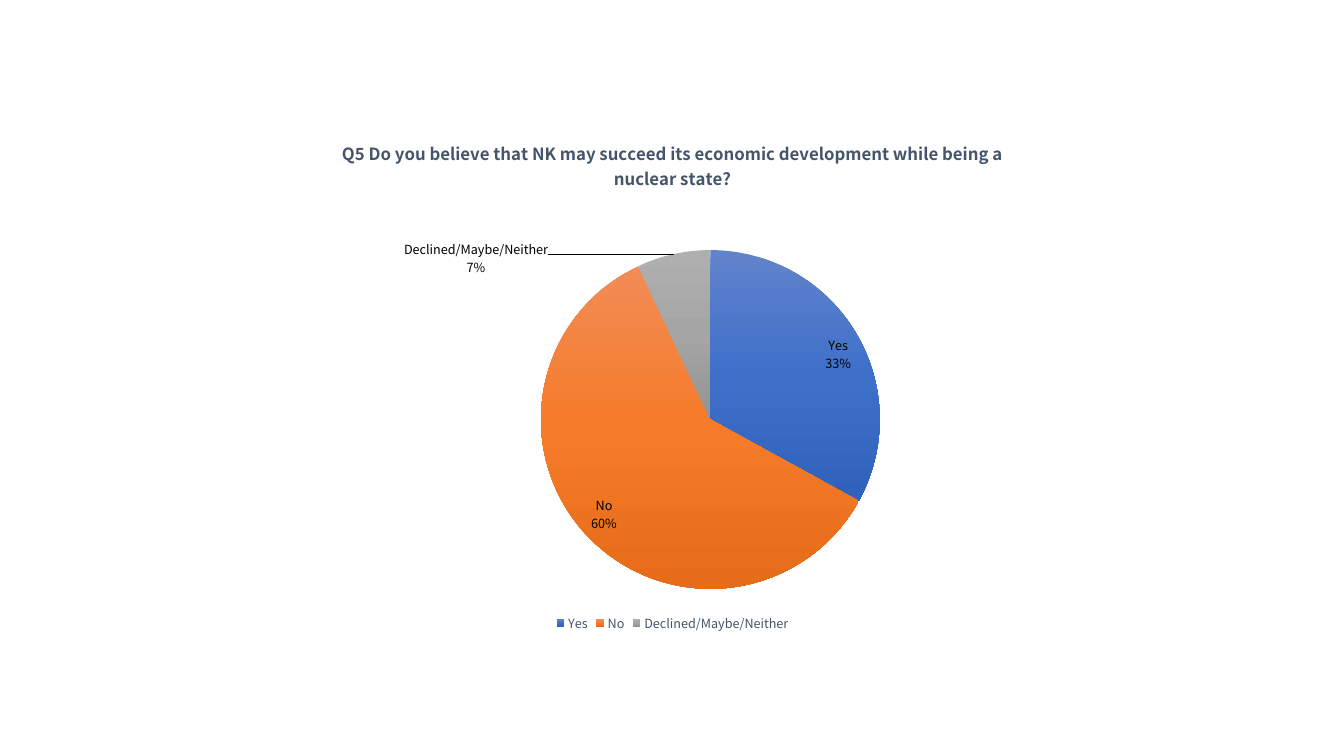
from copy import deepcopy

from lxml import etree
from pptx import Presentation
from pptx.chart.data import CategoryChartData
from pptx.dml.color import RGBColor
from pptx.enum.chart import XL_CHART_TYPE, XL_LABEL_POSITION, XL_LEGEND_POSITION
from pptx.oxml import parse_xml
from pptx.oxml.ns import nsdecls, qn
from pptx.util import Pt

PIE = XL_CHART_TYPE.PIE
INSIDE_END = XL_LABEL_POSITION.INSIDE_END
OUTSIDE_END = XL_LABEL_POSITION.OUTSIDE_END
BOTTOM = XL_LEGEND_POSITION.BOTTOM

SLATE = RGBColor(0x44, 0x54, 0x6A)
BLACK = RGBColor(0, 0, 0)
FONT = "Noto Sans CJK KR"

QUESTION = ("Q5 Do you believe that NK may succeed its economic development "
            "while being a nuclear state?")
# answer, percent, gradient from top to bottom
ANSWERS = [
    ("Yes", 33, (RGBColor(0x61, 0x83, 0xCB), RGBColor(0x3E, 0x70, 0xCA), RGBColor(0x30, 0x62, 0xBB))),
    ("No", 60, (RGBColor(0xF1, 0x8C, 0x57), RGBColor(0xF6, 0x7B, 0x28), RGBColor(0xE5, 0x6C, 0x19))),
    ("Declined/Maybe/Neither", 7,
     (RGBColor(0xAF, 0xAF, 0xAF), RGBColor(0xA5, 0xA5, 0xA5), RGBColor(0x93, 0x93, 0x93))),
]

SLIDE_SIZE = (1344, 756)
CHART_BOX = (216, 120, 913, 516)
PIE_BOX = (325, 130, 339, 339)  # inside the chart
CALLOUT_SHIFT = (-124, 27)      # moves the last label away from its slice


def px(length):
    return round(length * 914400 / 100.8)


def style_font(font, size, color, bold=False):
    font.name, font.size, font.bold = FONT, Pt(size), bold
    font.color.rgb = color


def manual_layout(settings):
    items = "".join(f'<c:{tag} val="{value}"/>' for tag, value in settings)
    return parse_xml(f'<c:layout {nsdecls("c")}><c:manualLayout>{items}'
                     '</c:manualLayout></c:layout>')


def chart_fractions(lengths):
    sides = CHART_BOX[2:] * 2
    return [round(length / side, 3) for length, side in zip(lengths, sides)]


def fill_slice(point, colors):
    fill = point.format.fill
    fill.gradient()
    fill.gradient_angle = 270
    stop_list = point.format._element.find(".//" + qn("a:gsLst"))
    stop_list.insert(1, deepcopy(stop_list[0]))
    for stop, color, position in zip(fill.gradient_stops, colors, (0, 0.5, 1)):
        stop.color.rgb = color
        stop.position = position
    point.format.line.fill.background()


def break_lines(label):
    """Put category and percentage on separate lines."""
    separator = etree.Element(qn("c:separator"))
    separator.text = "\n"
    label.find(qn("c:showPercent")).addnext(separator)
    bubble = label.find(qn("c:showBubbleSize"))
    if bubble is not None:
        bubble.addnext(separator)


def add_labels(plot, series):
    labels = plot.series[0].data_labels
    labels.show_category_name = labels.show_percentage = True
    labels.show_value = False
    labels.number_format, labels.number_format_is_linked = "0%", False
    labels.position = INSIDE_END
    style_font(labels.font, 9, BLACK)
    break_lines(labels._element)

    callout = series.points[len(ANSWERS) - 1].data_label
    style_font(callout.font, 9, BLACK)
    callout.position = OUTSIDE_END
    element = labels._element.find(qn("c:dLbl"))
    for tag, shown in (("showVal", "0"), ("showCatName", "1"), ("showPercent", "1")):
        element.find(qn("c:" + tag)).set("val", shown)
    element.insert(1, manual_layout(zip("xy", chart_fractions(CALLOUT_SHIFT))))
    break_lines(element)


def main():
    deck = Presentation()
    deck.slide_width, deck.slide_height = map(px, SLIDE_SIZE)
    slide = deck.slides.add_slide(deck.slide_layouts[6])

    data = CategoryChartData(number_format="General")
    data.categories = [answer for answer, _, _ in ANSWERS]
    data.add_series(QUESTION, [percent for _, percent, _ in ANSWERS])
    chart = slide.shapes.add_chart(PIE, *map(px, CHART_BOX), data).chart
    style_font(chart.font, 10, BLACK)

    title = chart.chart_title.text_frame
    title.text = QUESTION
    style_font(title.paragraphs[0].font, 12, SLATE, bold=True)

    chart.has_legend = True
    chart.legend.position = BOTTOM
    chart.legend.include_in_layout = False
    style_font(chart.legend.font, 9, SLATE)

    plot = chart.plots[0]
    plot.vary_by_categories = True
    series = plot.series[0]
    for index, (_, _, colors) in enumerate(ANSWERS):
        fill_slice(series.points[index], colors)
    add_labels(plot, series)

    plot_area = chart._chartSpace.chart.plotArea
    old_layout = plot_area.find(qn("c:layout"))
    if old_layout is not None:
        plot_area.remove(old_layout)
    plot_area.insert(0, manual_layout(
        [("layoutTarget", "inner"), ("xMode", "edge"), ("yMode", "edge"),
         *zip("xywh", chart_fractions(PIE_BOX))]))
    deck.save("out.pptx")


if __name__ == "__main__":
    main()
